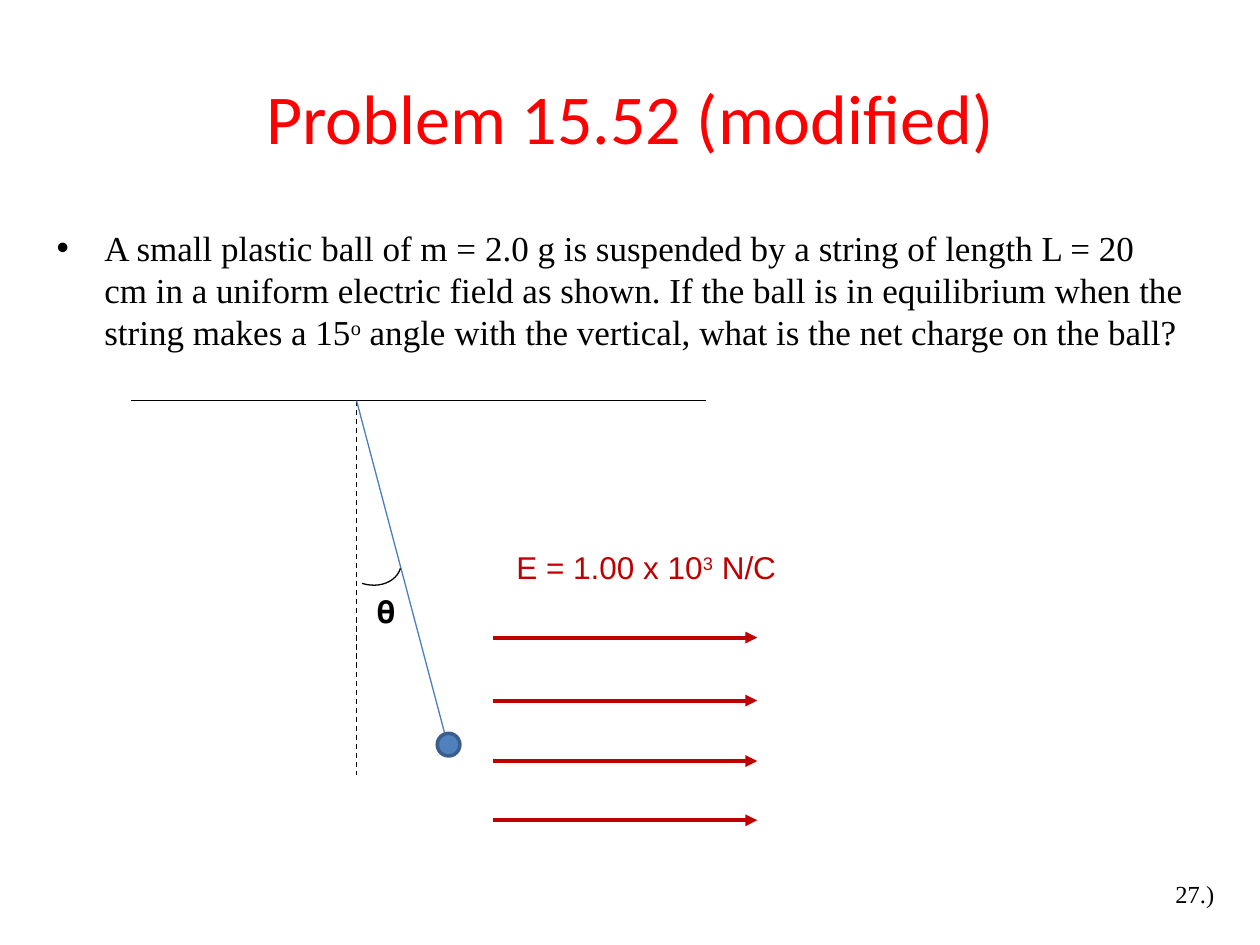
from lxml.etree import SubElement
from pptx import Presentation
from pptx.dml.color import RGBColor
from pptx.enum.dml import MSO_LINE
from pptx.enum.shapes import MSO_CONNECTOR, MSO_SHAPE
from pptx.enum.text import MSO_ANCHOR, MSO_AUTO_SIZE, PP_ALIGN
from pptx.oxml.ns import qn
from pptx.util import Inches, Pt

BLACK = RGBColor(0x00, 0x00, 0x00)
TITLE_RED = RGBColor(0xFF, 0x00, 0x00)
FIELD_RED = RGBColor(0xC0, 0x00, 0x00)
STRING_BLUE = RGBColor(0x4B, 0x7E, 0xBC)
BALL_BLUE = RGBColor(0x4F, 0x81, 0xBD)
BALL_OUTLINE = RGBColor(0x3A, 0x5F, 0x8C)

PIVOT = (2.83, 3.18)
FIELD_LINE_HEIGHTS = (5.06, 5.56, 6.04, 6.51)


def add_text(slide, box, parts, font_name, size, color, wrap=True, grow=True):
    """Add one paragraph; every second part is superscript."""
    text_frame = slide.shapes.add_textbox(*map(Inches, box)).text_frame
    text_frame.word_wrap = wrap
    text_frame.auto_size = MSO_AUTO_SIZE.SHAPE_TO_FIT_TEXT if grow else MSO_AUTO_SIZE.NONE
    paragraph = text_frame.paragraphs[0]
    paragraph.font.name = font_name
    paragraph.font.size = Pt(size)
    paragraph.font.color.rgb = color
    for index, part in enumerate(parts):
        run = paragraph.add_run()
        run.text = part
        run.font.name = font_name
        run.font.size = Pt(size)
        run.font.color.rgb = color
        if index % 2:
            run.font._element.set("baseline", "30000")
    return paragraph, text_frame


def add_bullet(paragraph, indent):
    properties = paragraph._p.get_or_add_pPr()
    properties.set("marL", str(Inches(indent)))
    properties.set("indent", str(-Inches(indent)))
    paragraph.space_before = Pt(4)
    bullet_font = SubElement(properties, qn("a:buFont"))
    bullet_font.set("typeface", "Arial")
    bullet = SubElement(properties, qn("a:buChar"))
    bullet.set("char", "•")
    default_run = properties.find(qn("a:defRPr"))
    if default_run is not None:
        properties.append(default_run)


def add_line(slide, start, end, color, width=0.75, dash=None, arrow=False):
    connector = slide.shapes.add_connector(
        MSO_CONNECTOR.STRAIGHT, *map(Inches, (*start, *end))
    )
    connector.line.color.rgb = color
    connector.line.width = Pt(width)
    if dash is not None:
        connector.line.dash_style = dash
    if arrow:
        SubElement(connector.line._get_or_add_ln(), qn("a:tailEnd")).set("type", "triangle")
    SubElement(connector._element.spPr, qn("a:effectLst"))


def add_outline(slide, kind, box, color, width, fill=None, rotation=0):
    shape = slide.shapes.add_shape(kind, *map(Inches, box))
    shape.shadow.inherit = False
    shape.rotation = rotation
    shape.line.color.rgb = color
    shape.line.width = Pt(width)
    if fill is None:
        shape.fill.background()
    else:
        shape.fill.solid()
        shape.fill.fore_color.rgb = fill


def add_pendulum(slide):
    add_line(slide, (1.04, PIVOT[1]), (5.6, PIVOT[1]), BLACK)
    add_line(slide, PIVOT, (PIVOT[0], 6.15), BLACK, dash=MSO_LINE.DASH)
    add_line(slide, PIVOT, (3.54, 5.86), STRING_BLUE)
    add_outline(slide, MSO_SHAPE.OVAL, (3.47, 5.82, 0.18, 0.18), BALL_OUTLINE, 2, BALL_BLUE)
    add_outline(slide, MSO_SHAPE.ARC, (2.73, 4.18, 0.41, 0.51), BLACK, 0.75, rotation=107.5)
    add_text(slide, (2.89, 4.65, 0.86, 0.4), ["𝛉"], "Arial", 18, BLACK)


def add_electric_field(slide):
    for height in FIELD_LINE_HEIGHTS:
        add_line(slide, (3.91, height), (6.01, height), FIELD_RED, 2.25, arrow=True)
    add_text(slide, (4, 4.3, 2.33, 0.4), ["E = 1.00 x 10", "3", " N/C"], "Arial", 18, FIELD_RED)


def main():
    presentation = Presentation()
    presentation.slide_width = Inches(10)
    presentation.slide_height = Inches(7.5)
    slide = presentation.slides.add_slide(presentation.slide_layouts[6])

    title, title_frame = add_text(
        slide, (0.5, 0.3, 9, 1.25), ["Problem 15.52 (modified)"],
        "Calibri", 40, TITLE_RED, grow=False,
    )
    title.alignment = PP_ALIGN.CENTER
    title_frame.vertical_anchor = MSO_ANCHOR.MIDDLE

    question = [
        "A small plastic ball of m = 2.0 g is suspended by a string of length L = 20 cm "
        "in a uniform electric field as shown. If the ball is in equilibrium when the "
        "string makes a 15",
        "o",
        " angle with the vertical, what is the net charge on the ball?",
    ]
    body, _ = add_text(
        slide, (0.35, 1.75, 9.15, 4.95), question, "Times New Roman", 20, BLACK, grow=False
    )
    add_bullet(body, 0.38)

    add_pendulum(slide)
    add_electric_field(slide)
    add_text(
        slide, (9.23, 6.93, 0.61, 0.34), ["27.)"], "Times New Roman", 14, BLACK, wrap=False
    )
    presentation.save("out.pptx")


if __name__ == "__main__":
    main()
